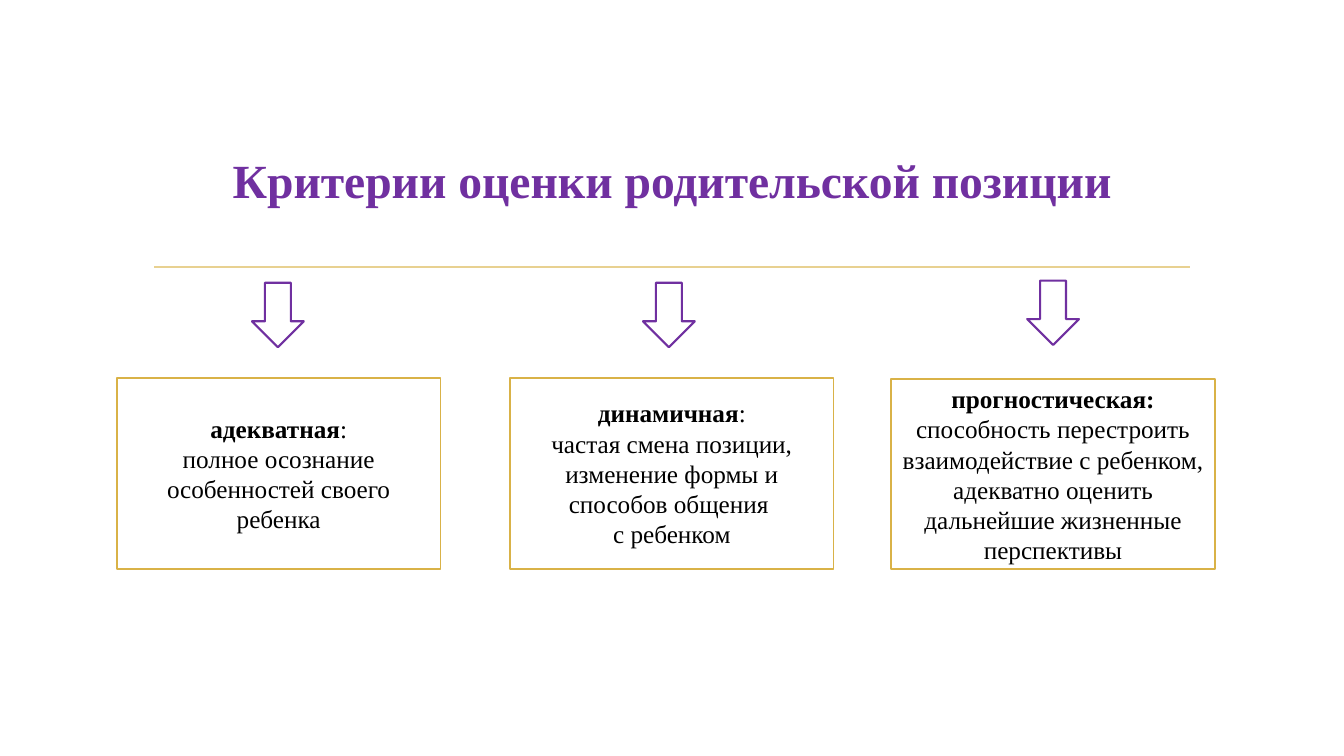
from pptx import Presentation
from pptx.dml.color import RGBColor
from pptx.enum.shapes import MSO_CONNECTOR, MSO_SHAPE
from pptx.enum.text import MSO_ANCHOR, PP_ALIGN
from pptx.oxml.ns import qn
from pptx.util import Pt
from lxml.etree import SubElement

COLORS = {"purple": "7030A0", "gold": "D9B247", "rule": "E8D191",
          "white": "FFFFFF", "black": "000000"}
FONT = "Times New Roman"


def add_run(p, text, size, color, bold=False):
    r = p.add_run()
    r.text = text
    r.font.name, r.font.size, r.font.bold = FONT, Pt(size), bold
    r.font.color.rgb = RGBColor.from_string(COLORS[color])


def add_outlined(kind, left, top, width, height, color, weight):
    sp = s.shapes.add_shape(kind, Pt(left), Pt(top), Pt(width), Pt(height))
    sp.shadow.inherit = False
    sp.fill.solid()
    sp.fill.fore_color.rgb = RGBColor.from_string(COLORS["white"])
    sp.line.color.rgb = RGBColor.from_string(COLORS[color])
    sp.line.width = Pt(weight)
    return sp


prs = Presentation()
prs.slide_width, prs.slide_height = Pt(960), Pt(540)
s = prs.slides.add_slide(prs.slide_layouts[5])

# Title
title = s.shapes.title
title.left, title.top, title.width, title.height = Pt(70.6), Pt(104.4), Pt(819.4), Pt(48.2)
p = title.text_frame.paragraphs[0]
p.alignment = PP_ALIGN.CENTER
add_run(p, "Критерии оценки родительской позиции", 34, "purple", True)

# Rule under the title
rule = s.shapes.add_connector(MSO_CONNECTOR.STRAIGHT, Pt(110.3), Pt(190.8), Pt(850.3), Pt(190.8))
rule.line.color.rgb = RGBColor.from_string(COLORS["rule"])
rule.line.width = Pt(1.25)
SubElement(rule._element.spPr, qn("a:effectLst"))

# Criteria: box left, box top, arrow centre, arrow top, name, colon is bold, lines
BOX_W, BOX_H = 231.2, 136.2
ARROW_W, ARROW_H = 37, 46
criteria = [
    (83.5, 270, 198.5, 202, "адекватная", False,
     ["полное осознание особенностей своего ребенка"]),
    (364.3, 270, 477.8, 202, "динамичная", False,
     ["частая смена позиции, изменение формы и способов общения ", "с ребенком"]),
    (636.6, 270.5, 752.2, 200.4, "прогностическая", True,
     ["способность перестроить взаимодействие с ребенком, адекватно оценить "
      "дальнейшие жизненные перспективы"]),
]
for left, top, center, arrow_top, name, bold_colon, lines in criteria:
    box = add_outlined(MSO_SHAPE.RECTANGLE, left, top, BOX_W, BOX_H, "gold", 1.25)
    tf = box.text_frame
    tf.word_wrap = True
    tf.vertical_anchor = MSO_ANCHOR.MIDDLE
    p = tf.paragraphs[0]
    p.alignment = PP_ALIGN.CENTER
    add_run(p, name, 18, "black", True)
    add_run(p, ":", 18, "black", bold_colon)
    p = tf.add_paragraph()
    p.alignment = PP_ALIGN.CENTER
    for i, line in enumerate(lines):
        if i:
            p.add_line_break()
        add_run(p, line, 18, "black")
    add_outlined(MSO_SHAPE.DOWN_ARROW, center - ARROW_W / 2, arrow_top,
                 ARROW_W, ARROW_H, "purple", 1.5)

prs.save("out.pptx")
